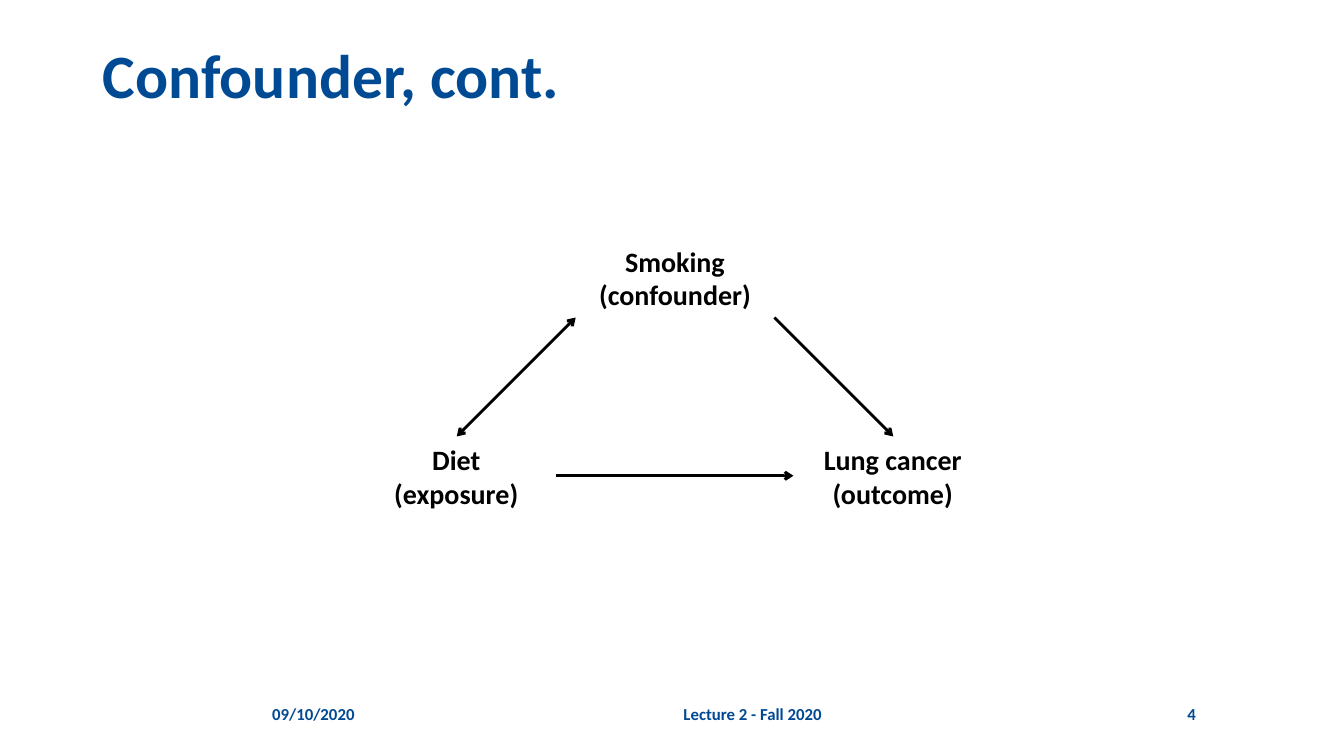
import dataclasses
from typing import Any

import lxml.etree
import pptx
import pptx.dml.color
import pptx.enum.shapes
import pptx.enum.text
import pptx.oxml.ns
import pptx.util

SCALE = 9144  # EMU per px, 100 px to the inch
COLORS = {"blue": "004A93", "black": "000000"}
FONT = "Calibri"
ALIGN = pptx.enum.text.PP_ALIGN
ANCHOR = pptx.enum.text.MSO_ANCHOR
FIT = pptx.enum.text.MSO_AUTO_SIZE


@dataclasses.dataclass
class Label:
    text: str
    left: int
    top: int
    width: int
    height: int
    align: Any = ALIGN.CENTER


@dataclasses.dataclass
class Arrow:
    start: tuple[int, int]
    end: tuple[int, int]
    both: bool = False


FOOTER = [
    Label("09/10/2020", 260, 688, 131, 40, ALIGN.LEFT),
    Label("Lecture 2 - Fall 2020", 407, 688, 679, 40),
    Label("4", 1102, 688, 94, 40, ALIGN.RIGHT),
]
NODES = [
    Label("Smoking\v(confounder)", 571, 236, 197, 79),
    Label("Diet\v(exposure)", 354, 433, 197, 79),
    Label("Lung cancer\v(outcome)", 787, 433, 197, 79),
]
ARROWS = [
    Arrow((453, 433), (571, 315), both=True),
    Arrow((551, 472), (787, 472)),
    Arrow((768, 315), (886, 433)),
]


def px(count: int) -> pptx.util.Emu:
    return pptx.util.Emu(count * SCALE)


def rgb(name: str) -> pptx.dml.color.RGBColor:
    return pptx.dml.color.RGBColor.from_string(COLORS[name])


def write(shape: Any, text: str, *, size: int, color: str, align: Any,
          anchor: Any = ANCHOR.MIDDLE, fit: Any = FIT.NONE,
          spacing: float = 1.0) -> None:
    frame = shape.text_frame
    frame.word_wrap = True
    frame.auto_size = fit
    frame.vertical_anchor = anchor
    frame.text = text
    para = frame.paragraphs[0]
    para.alignment = align
    para.line_spacing = spacing
    for run in para.runs:
        run.font.name = FONT
        run.font.size = pptx.util.Pt(size)
        run.font.bold = True
        run.font.color.rgb = rgb(color)


def add_label(slide: Any, label: Label, **style: Any) -> None:
    box = slide.shapes.add_textbox(
        px(label.left), px(label.top), px(label.width), px(label.height))
    write(box, label.text, align=label.align, **style)


def add_arrow(slide: Any, arrow: Arrow) -> None:
    line = slide.shapes.add_connector(
        pptx.enum.shapes.MSO_CONNECTOR.STRAIGHT,
        *map(px, arrow.start + arrow.end))
    line.line.color.rgb = rgb("black")
    line.line.width = pptx.util.Pt(2)
    qn = pptx.oxml.ns.qn
    for tag in ("a:headEnd", "a:tailEnd") if arrow.both else ("a:tailEnd",):
        lxml.etree.SubElement(line.line._get_or_add_ln(), qn(tag), type="arrow")
    lxml.etree.SubElement(line._element.spPr, qn("a:effectLst"))


def main() -> None:
    deck = pptx.Presentation()
    deck.slide_width, deck.slide_height = px(1333), px(750)
    slide = deck.slides.add_slide(deck.slide_layouts[5])

    title = slide.shapes.title
    title.left, title.top = px(92), px(40)
    title.width, title.height = px(1150), px(145)
    write(title, "Confounder, cont.", size=44, color="blue",
          align=ALIGN.LEFT, anchor=ANCHOR.TOP, spacing=0.9)

    for label in FOOTER:
        add_label(slide, label, size=12, color="blue")
    for label in NODES:
        add_label(slide, label, size=20, color="black", fit=FIT.SHAPE_TO_FIT_TEXT)
    for arrow in ARROWS:
        add_arrow(slide, arrow)
    deck.save("out.pptx")


if __name__ == "__main__":
    main()
